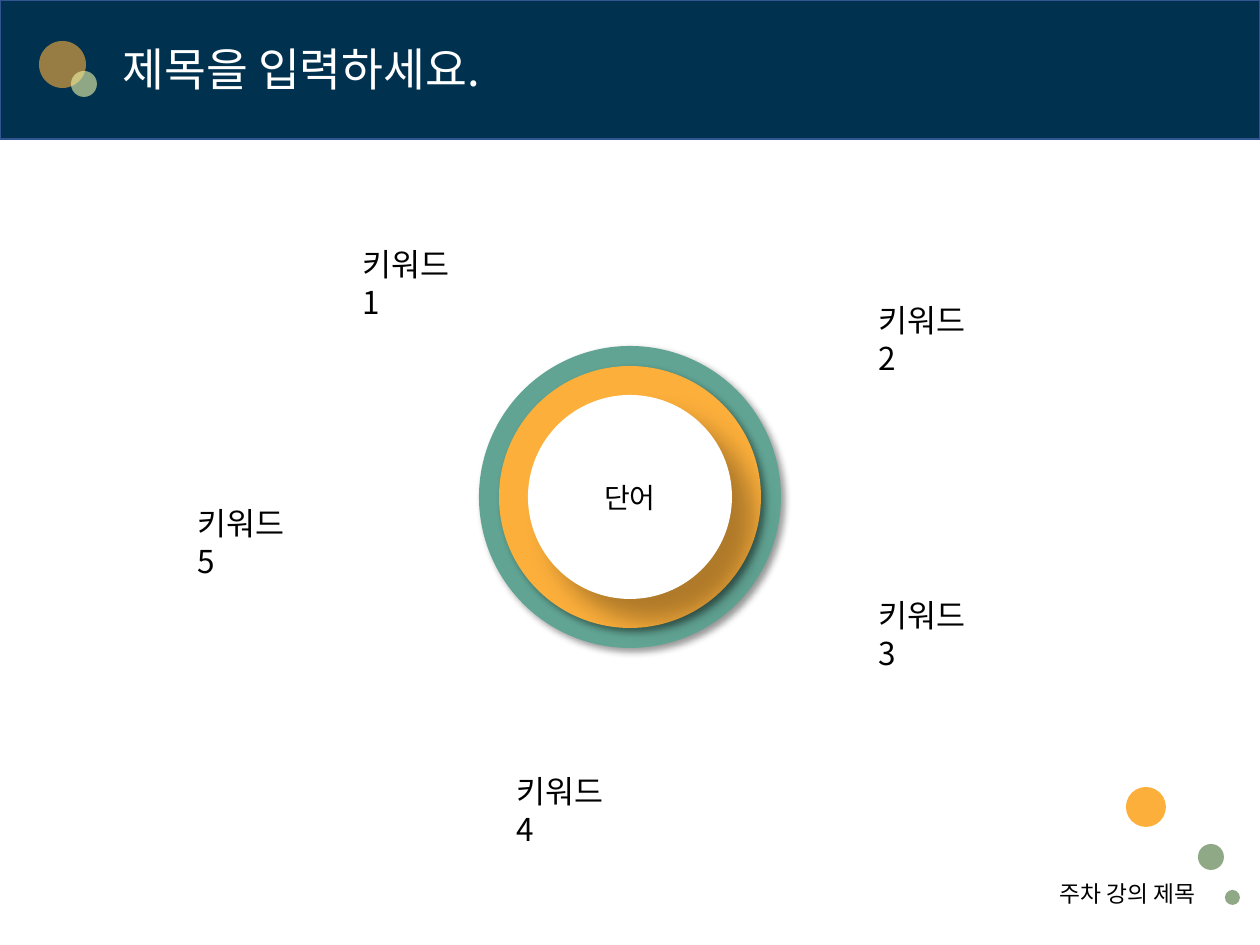
from lxml.etree import SubElement
from pptx import Presentation
from pptx.dml.color import RGBColor
from pptx.enum.shapes import MSO_SHAPE
from pptx.enum.text import MSO_ANCHOR, MSO_AUTO_SIZE, PP_ALIGN
from pptx.oxml.ns import qn
from pptx.util import Emu, Pt

PX = 914400 // 126
FONT = "Noto Sans CJK KR"
NAVY, ORANGE, TEAL, SAGE = "003250", "FCAF3B", "61A493", "8FA885"
WHITE, BLACK, LIME = "FFFFFF", "000000", "EFF6A9"

KEYWORDS = [("키워드2", 866, 295), ("키워드1", 350, 239), ("키워드5", 185, 498),
            ("키워드4", 504, 766), ("키워드3", 866, 590)]
CORNER_DOTS = [(1126, 787, 40, ORANGE), (1198, 844, 26, SAGE), (1225, 890, 15, SAGE)]
# diameter, colour, shadow opacity %, blur pt, distance pt
RINGS = [(302, TEAL, 40, 4, 3), (262, ORANGE, 40, 4, 3), (204, WHITE, 30, 15, 18)]
RING_CENTRE = (630, 497)


def px(*lengths):
    return [Emu(length * PX) for length in lengths]


def colour(code):
    return RGBColor.from_string(code)


def apply(target, values):
    for name, value in values.items():
        setattr(target, name, value)


def add_filled(shapes, kind, bounds, fill, opacity=100):
    shape = shapes.add_shape(kind, *px(*bounds))
    shape.shadow.inherit = False
    shape.fill.solid()
    shape.fill.fore_color.rgb = colour(fill)
    shape.line.fill.background()
    if opacity < 100:
        code = shape.fill._xPr.find(f"{qn('a:solidFill')}/{qn('a:srgbClr')}")
        SubElement(code, qn("a:alpha"), val=str(opacity * 1000))
    return shape


def add_circle(shapes, left, top, size, fill, opacity=100):
    return add_filled(shapes, MSO_SHAPE.OVAL, (left, top, size, size), fill, opacity)


def cast_shadow(shape, opacity, blur, distance):
    """Add a soft black shadow towards the lower right."""
    effects = shape._element.spPr.find(qn("a:effectLst"))
    shadow = SubElement(effects, qn("a:outerShdw"), blurRad=str(Pt(blur)),
                        dist=str(Pt(distance)), dir="2700000", algn="tl",
                        rotWithShape="0")
    code = SubElement(shadow, qn("a:srgbClr"), val=BLACK)
    SubElement(code, qn("a:alpha"), val=str(opacity * 1000))


def write(frame, text, size, fill=BLACK, frame_format=None, **para_format):
    apply(frame, {"word_wrap": True, **(frame_format or {})})
    para = frame.paragraphs[0]
    apply(para, para_format)
    span = para.add_run()
    span.text = text
    apply(span.font, {"name": FONT, "size": Pt(size)})
    span.font.color.rgb = colour(fill)
    SubElement(span.font._element, qn("a:ea"), typeface=FONT)


def add_text(page, bounds, *content, **formats):
    box = page.shapes.add_textbox(*px(*bounds))
    write(box.text_frame, *content, **formats)


def add_header(page):
    band = add_filled(page.shapes, MSO_SHAPE.RECTANGLE, (0, 0, 1260, 139), NAVY)
    band.line.color.rgb = colour("325491")
    band.line.width = Pt(1)
    dots = page.shapes.add_group_shape().shapes
    add_circle(dots, 39, 41, 47, ORANGE, 60)
    add_circle(dots, 71, 71, 26, LIME, 60)
    add_text(page, (110, 35, 719, 67), "제목을 입력하세요.", 26, WHITE,
             frame_format={"vertical_anchor": MSO_ANCHOR.BOTTOM}, line_spacing=0.9)


def add_rings(page):
    rings = page.shapes.add_group_shape().shapes
    for size, fill, *shadow in RINGS:
        left, top = (centre - size // 2 for centre in RING_CENTRE)
        ring = add_circle(rings, left, top, size, fill)
        cast_shadow(ring, *shadow)
    write(ring.text_frame, "단어", 16,
          frame_format={"vertical_anchor": MSO_ANCHOR.MIDDLE},
          alignment=PP_ALIGN.CENTER)


def main():
    deck = Presentation()
    deck.slide_width, deck.slide_height = px(1260, 945)
    page = deck.slides.add_slide(deck.slide_layouts[6])
    add_header(page)
    add_text(page, (1043, 877, 169, 39), "주차 강의 제목", 13,
             alignment=PP_ALIGN.CENTER, line_spacing=0.9)
    add_rings(page)
    for word, left, top in KEYWORDS:
        add_text(page, (left, top, 126, 50), word, 18,
                 frame_format={"auto_size": MSO_AUTO_SIZE.SHAPE_TO_FIT_TEXT})
    for dot in CORNER_DOTS:
        add_circle(page.shapes, *dot)
    deck.save("out.pptx")


if __name__ == "__main__":
    main()
